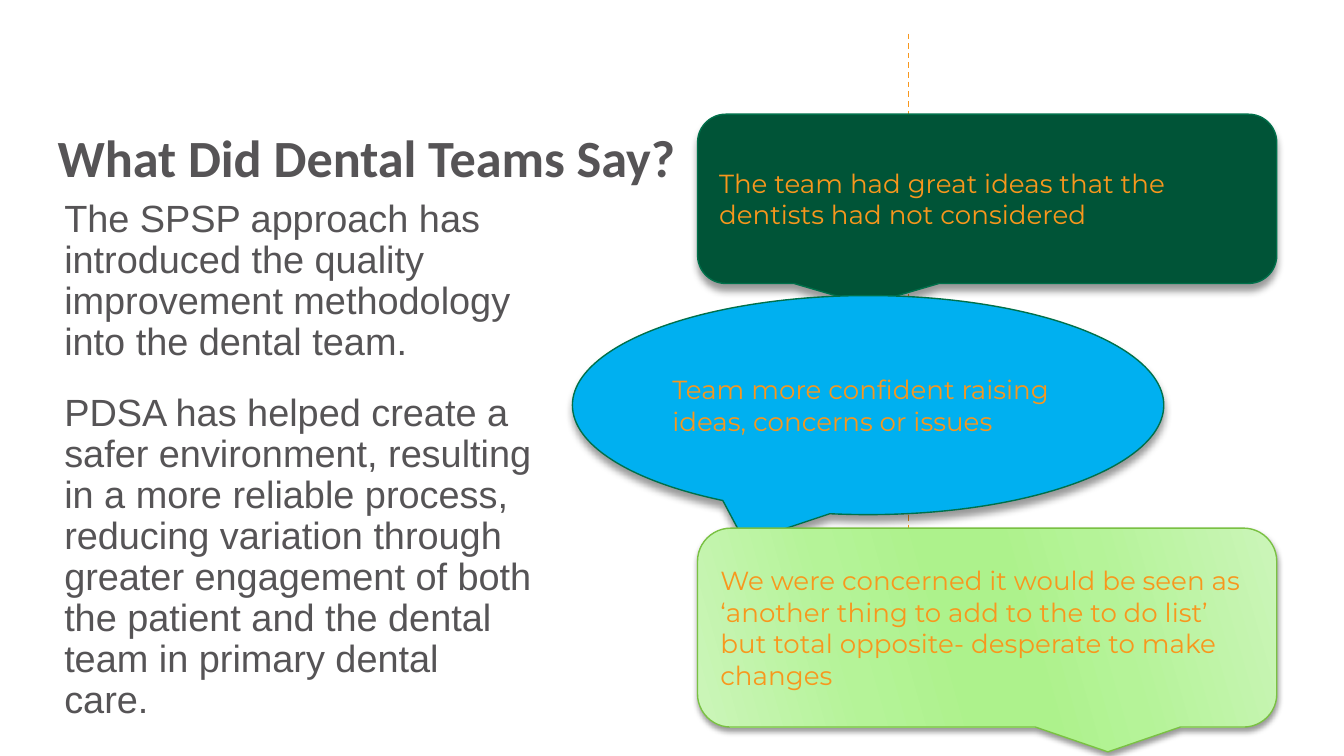
from dataclasses import dataclass

from lxml.etree import SubElement
from pptx import Presentation
from pptx.dml.color import RGBColor
from pptx.enum.dml import MSO_LINE
from pptx.enum.shapes import MSO_CONNECTOR, MSO_SHAPE
from pptx.enum.text import MSO_ANCHOR, PP_ALIGN
from pptx.oxml.ns import qn
from pptx.util import Inches, Pt

ORANGE, GREY = "F8971D", "565456"
PALE_GREEN = [(0, "CBF5B9"), (30, "B5F398"), (45, "ADF28C"),
              (55, "ADF28C"), (73, "B5F398"), (100, "CBF5B9")]
TITLE_FONT = {"name": "Calibri", "size": Pt(28), "bold": True}
BODY_FONT = {"name": "Arial", "size": Pt(20.3)}
QUOTE_FONT = {"name": "Montserrat", "size": Pt(14)}
BODY_SPACING = {"line_spacing": Pt(22), "space_before": Pt(6), "space_after": Pt(10)}


@dataclass
class Callout:
    box: tuple[float, float, float, float]
    preset: MSO_SHAPE
    fill: str | list[tuple[int, str]]
    line: str
    shadow: tuple[float, float]  # blur and distance in points
    text: str
    flipped: bool = False


CALLOUTS = [
    Callout((5.19, 0.85, 4.31, 1.26), MSO_SHAPE.ROUNDED_RECTANGULAR_CALLOUT,
            "005437", "00704A", (4, 3.4),
            "The team had great ideas that the dentists had not considered"),
    Callout((4.26, 2.2, 4.4, 1.63), MSO_SHAPE.OVAL_CALLOUT,
            "00B0F0", "00704A", (4, 3.4),
            "Team more confident raising ideas, concerns or issues"),
    Callout((5.19, 3.93, 4.31, 1.48), MSO_SHAPE.ROUNDED_RECTANGULAR_CALLOUT,
            PALE_GREEN, "7AC143", (3, 2),
            "We were concerned it would be seen as ‘another thing to add to the "
            "to do list’ but total opposite- desperate to make changes", True),
]


def rgb(value: str) -> RGBColor:
    return RGBColor.from_string(value)


def set_attrs(target, values: dict) -> None:
    for name, value in values.items():
        setattr(target, name, value)


def add_run(p, text: str, font: dict, color: str) -> None:
    r = p.add_run()
    r.text = text
    set_attrs(r.font, font)
    r.font.color.rgb = rgb(color)


def add_text(s, box: tuple, paragraphs: list[str], font: dict, spacing: dict):
    tf = s.shapes.add_textbox(*map(Inches, box)).text_frame
    tf.word_wrap = True
    for i, text in enumerate(paragraphs):
        p = tf.add_paragraph() if i else tf.paragraphs[0]
        set_attrs(p, spacing)
        add_run(p, text, font, GREY)
    return tf


def add_shadow(sp, blur: float, distance: float) -> None:
    sp.shadow.inherit = False
    effects = sp._element.spPr.find(qn("a:effectLst"))
    shadow = SubElement(effects, qn("a:outerShdw"), blurRad=str(Pt(blur)),
                        dist=str(Pt(distance)), dir="5400000", rotWithShape="0")
    color = SubElement(shadow, qn("a:srgbClr"), val="000000")
    SubElement(color, qn("a:alpha"), val="40000")


def fill_gradient(sp, stops: list[tuple[int, str]], angle: float) -> None:
    """Fill with any number of stops; the angle runs clockwise."""
    sp.fill.gradient()
    sp.fill.gradient_angle = 360 - angle
    stop_list = sp._element.spPr.find(".//" + qn("a:gsLst"))
    for stop in list(stop_list):
        stop_list.remove(stop)
    for position, color in stops:
        stop = SubElement(stop_list, qn("a:gs"), pos=str(position * 1000))
        SubElement(stop, qn("a:srgbClr"), val=color)


def add_callout(s, callout: Callout) -> None:
    sp = s.shapes.add_shape(callout.preset, *map(Inches, callout.box))
    if isinstance(callout.fill, str):
        sp.fill.solid()
        sp.fill.fore_color.rgb = rgb(callout.fill)
    else:
        fill_gradient(sp, callout.fill, 16)
    sp.line.color.rgb = rgb(callout.line)
    sp.line.width = Pt(0.75)
    add_shadow(sp, *callout.shadow)
    if callout.flipped:
        sp._element.spPr.find(qn("a:xfrm")).set("flipH", "1")
    tf = sp.text_frame
    set_attrs(tf, {"word_wrap": True, "vertical_anchor": MSO_ANCHOR.MIDDLE})
    p = tf.paragraphs[0]
    p.alignment = PP_ALIGN.LEFT
    add_run(p, callout.text, QUOTE_FONT, ORANGE)


def add_divider(s) -> None:
    line = s.shapes.add_connector(MSO_CONNECTOR.STRAIGHT, Inches(6.76), Inches(0.25),
                                  Inches(6.76), Inches(5.2))
    line.line.color.rgb = rgb(ORANGE)
    set_attrs(line.line, {"width": Pt(0.75), "dash_style": MSO_LINE.DASH})
    SubElement(line._element.spPr, qn("a:effectLst"))


def main() -> None:
    prs = Presentation()
    prs.slide_width, prs.slide_height = Inches(10), Inches(10 * 9 / 16)
    s = prs.slides.add_slide(prs.slide_layouts[6])
    add_divider(s)
    add_text(s, (0.33, 0.88, 6.25, 4.06), ["What Did Dental Teams Say?"],
             TITLE_FONT, {"space_before": Pt(6)})
    body = add_text(s, (0.38, 0.9, 3.68, 4.5), [
        "The SPSP approach has introduced the quality improvement methodology "
        "into the dental team.",
        "PDSA has helped create a safer environment, resulting in a more reliable "
        "process, reducing variation through greater engagement of both the patient "
        "and the dental team in primary dental care.",
    ], BODY_FONT, BODY_SPACING)
    body.margin_top = Inches(0.58)
    for callout in CALLOUTS:
        add_callout(s, callout)
    prs.save("out.pptx")


if __name__ == "__main__":
    main()
